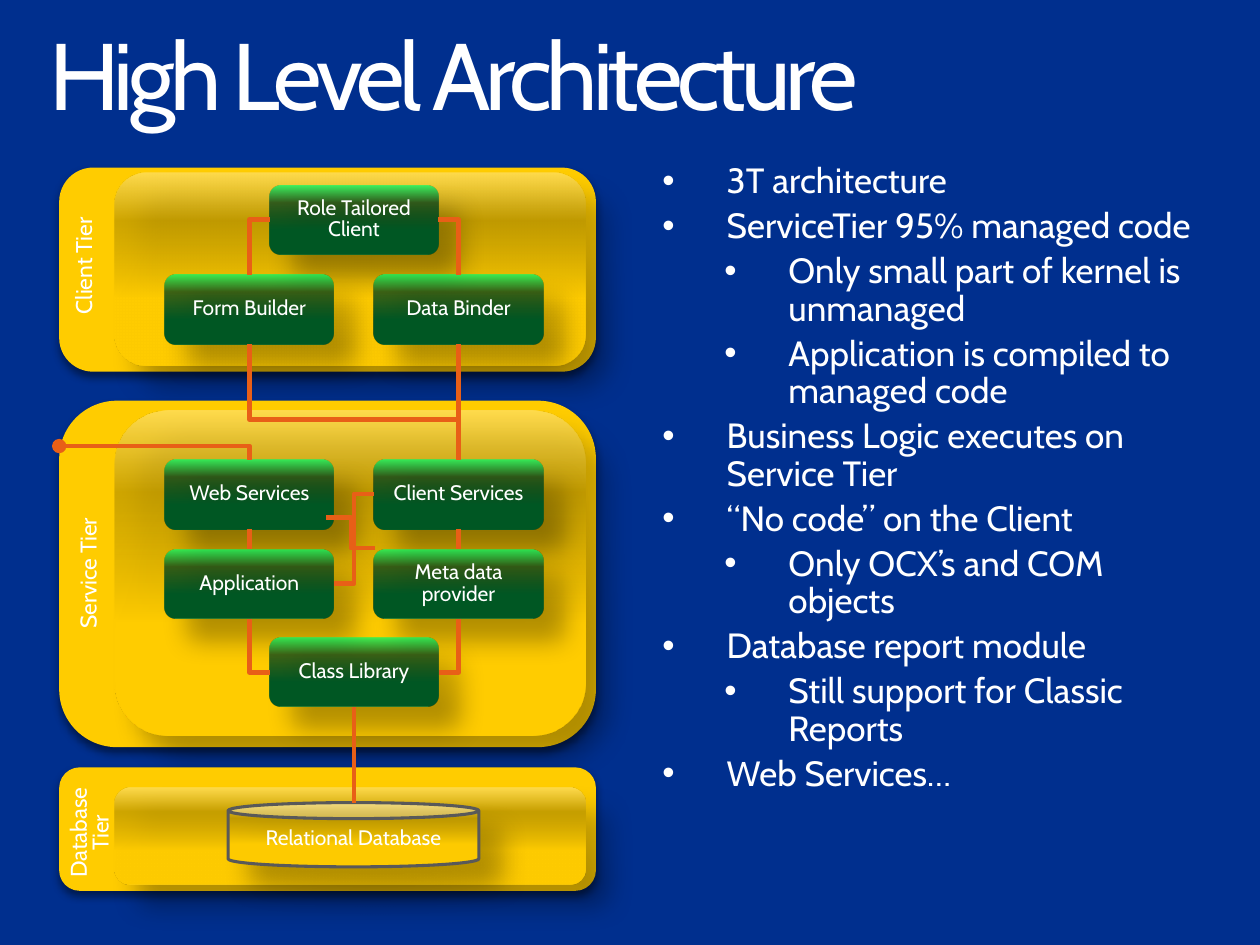
from dataclasses import dataclass

from lxml.etree import SubElement
from pptx import Presentation
from pptx.dml.color import RGBColor
from pptx.enum.shapes import MSO_CONNECTOR as Wire, MSO_SHAPE as Shape
from pptx.enum.text import MSO_ANCHOR as Anchor, MSO_AUTO_SIZE as AutoSize, PP_ALIGN as Align
from pptx.oxml.ns import qn
from pptx.util import Inches, Pt


@dataclass(frozen=True)
class Theme:
    font: str = "Cabin"
    bullet_font: str = "Arial"
    background: str = "002F8E"
    text: str = "FFFFFF"
    gold: str = "FFCC00"
    can_edge: str = "595959"
    wire: str = "E85F17"
    # Gradient stops: position, colour, opacity in percent
    gold_stops: tuple = ((0, "FFEB99", 100), (0, "FFCC00", 100), (35, "FFCC00", 100),
                         (75, "BF9900", 75), (100, "FFE066", 75))
    green_stops: tuple = ((0, "56FF9D", 100), (0, "005825", 100), (35, "005825", 100),
                          (75, "00421C", 75), (100, "02FF6C", 75))
    # Shadows: opacity in percent, blur and distance in points, direction in degrees
    tier_shadow: tuple = (45, 5, 3, 90)
    raised_shadow: tuple = (30, 15, 18, 45)
    title_size: int = 54
    body_size: int = 20
    label_size: int = 13
    box_size: int = 12
    can_edge_width: float = 1.75
    wire_width: float = 2.75


THEME = Theme()

# Diagram grid in inches
BOX_WIDTH, BOX_HEIGHT = 1.34, 0.55
COLUMNS = {"left": 1.31, "middle": 2.14, "right": 2.97}
ROWS = (1.47, 2.18, 3.65, 4.36, 5.06)
TIER_LEFT, TIER_WIDTH = 0.47, 4.26
PANEL_LEFT, PANEL_WIDTH = 0.91, 3.74

# Tier top and height, then panel top and height
TIERS = ((1.33, 1.62, 1.37, 1.53), (3.18, 2.75, 3.26, 2.58), (6.09, 0.98, 6.25, 0.77))
# Label, left edge, vertical centre, thickness, line spacing
LABELS = (("Client Tier", 0.55, 2.11, 0.31, 1.0),
          ("Service Tier", 0.62, 4.55, 0.28, 0.85),
          ("Database\vTier", 0.55, 6.61, 0.55, 0.8))
BOXES = (("Role Tailored Client", "middle", 0),
         ("Form Builder", "left", 1), ("Data Binder", "right", 1),
         ("Web Services", "left", 2), ("Client Services", "right", 2),
         ("Application", "left", 3), ("Meta data provider", "right", 3),
         ("Class Library", "middle", 4))
BULLETS = ((0, "3T architecture"),
           (0, "ServiceTier 95% managed code"),
           (1, "Only small part of kernel is unmanaged"),
           (1, "Application is compiled to managed code"),
           (0, "Business Logic executes on Service Tier"),
           (0, "“No code” on the Client"),
           (1, "Only OCX’s and COM objects"),
           (0, "Database report module"),
           (1, "Still support for Classic Reports"),
           (0, "Web Services…"))


def rgb(value):
    return RGBColor.from_string(value)


def set_values(target, values):
    for name, value in values.items():
        setattr(target, name, value)


def format_frame(frame, insets=(0, 0), anchor=Anchor.TOP):
    across, down = map(Inches, insets)
    set_values(frame, dict(margin_left=across, margin_right=across, margin_top=down,
                           margin_bottom=down, word_wrap=True, vertical_anchor=anchor))


def format_para(para, size, align=Align.LEFT, spacing=0.9):
    set_values(para, dict(alignment=align, line_spacing=spacing))
    set_values(para.font, dict(name=THEME.font, size=Pt(size)))
    para.font.color.rgb = rgb(THEME.text)


def add_color(parent, color, opacity):
    node = SubElement(parent, qn("a:srgbClr"), val=color)
    if opacity < 100:
        SubElement(node, qn("a:alpha"), val=str(opacity * 1000))


def add_shadow(shape, opacity, blur, distance, direction):
    shape.shadow.inherit = False
    effects = shape._element.spPr.find(qn("a:effectLst"))
    shadow = SubElement(effects, qn("a:outerShdw"), blurRad=str(Pt(blur)), dist=str(Pt(distance)),
                        dir=str(direction * 60000), algn="ctr", rotWithShape="0")
    add_color(shadow, "000000", opacity)


def fill_gradient(shape, stops):
    shape.fill.gradient()
    shape.fill.gradient_angle = 90
    stop_list = shape._element.spPr.find(".//" + qn("a:gsLst"))
    for old in list(stop_list):
        stop_list.remove(old)
    for position, color, opacity in stops:
        stop = SubElement(stop_list, qn("a:gs"), pos=str(position * 1000))
        add_color(stop, color, opacity)


def add_tier(page, top, height):
    tier = page.shapes.add_shape(Shape.ROUNDED_RECTANGLE,
                                 *map(Inches, (TIER_LEFT, top, TIER_WIDTH, height)))
    tier.fill.solid()
    tier.fill.fore_color.rgb = rgb(THEME.gold)
    tier.line.fill.background()
    add_shadow(tier, *THEME.tier_shadow)


def add_raised(page, place, stops, text="", kind=Shape.ROUNDED_RECTANGLE):
    shape = page.shapes.add_shape(kind, *map(Inches, place))
    fill_gradient(shape, stops)
    shape.line.fill.background()
    add_shadow(shape, *THEME.raised_shadow)
    if text:
        format_frame(shape.text_frame, (0.12, 0.06), Anchor.MIDDLE)
        shape.text_frame.text = text
        format_para(shape.text_frame.paragraphs[0], THEME.box_size, Align.CENTER, 0.85)
    return shape


def add_label(page, text, left, middle, thickness, spacing):
    length = 1.89
    place = (left + (thickness - length) / 2, middle - thickness / 2, length, thickness)
    label = page.shapes.add_textbox(*map(Inches, place))
    label.rotation = 270
    format_frame(label.text_frame)
    label.text_frame.text = text
    format_para(label.text_frame.paragraphs[0], THEME.label_size, Align.CENTER, spacing)


def format_wire(wire):
    wire.line.color.rgb = rgb(THEME.wire)
    wire.line.width = Pt(THEME.wire_width)
    SubElement(wire._element.spPr, qn("a:effectLst"))


def join_down(page, upper, lower=None, end=None):
    """Straight wire from the bottom of one box to the top of another, or to a point."""
    wire = page.shapes.add_connector(Wire.STRAIGHT, 0, 0, *map(Inches, end or (0, 0)))
    wire.begin_connect(upper, 2)
    if lower is not None:
        wire.end_connect(lower, 0)
    format_wire(wire)


def add_elbow(page, begin, end, vertical=True, bend=None, oval=False):
    """Bent wire; with a bend share it turns twice, otherwise once."""
    (x1, y1), (x2, y2) = begin, end
    if vertical:
        # Lay the path out sideways round its centre, then turn it a quarter
        mid_x, mid_y = (x1 + x2) / 2, (y1 + y2) / 2
        half_x, half_y = (y2 - y1) / 2, (x1 - x2) / 2
        x1, x2, y1, y2 = mid_x - half_x, mid_x + half_x, mid_y - half_y, mid_y + half_y
    wire = page.shapes.add_connector(Wire.ELBOW, *map(Inches, (x1, y1, x2, y2)))
    wire._element.spPr.xfrm.set("rot", "5400000" if vertical else "0")
    geometry = wire._element.spPr.find(qn("a:prstGeom"))
    if bend is None:
        geometry.set("prst", "bentConnector2")
    else:
        SubElement(geometry.find(qn("a:avLst")), qn("a:gd"), name="adj1",
                   fmla=f"val {round(bend * 100000)}")
    format_wire(wire)
    if oval:
        SubElement(wire.line._get_or_add_ln(), qn("a:tailEnd"), type="oval")


def add_title(page, text):
    title = page.shapes.title
    set_values(title, dict(left=Inches(0.39), top=Inches(0.23),
                           width=Inches(9.17), height=Inches(0.73)))
    format_frame(title.text_frame)
    title.text_frame.auto_size = AutoSize.SHAPE_TO_FIT_TEXT
    title.text_frame.text = text
    para = title.text_frame.paragraphs[0]
    format_para(para, THEME.title_size)
    para.runs[0].font._element.set("spc", "-300")


def add_bullets(page):
    box = page.shapes.add_textbox(*map(Inches, (5.16, 1.25, 4.43, 5.86)))
    frame = box.text_frame
    format_frame(frame, (0.1, 0.05))
    for number, (level, text) in enumerate(BULLETS):
        para = frame.add_paragraph() if number else frame.paragraphs[0]
        para.text, para.level = text, level
        properties = para._p.get_or_add_pPr()
        properties.set("marL", str(Inches((0.51, 1)[level])))
        properties.set("indent", str(Inches(-0.51)))
        SubElement(properties, qn("a:buFont"), typeface=THEME.bullet_font)
        SubElement(properties, qn("a:buChar"), char="•")
        format_para(para, THEME.body_size)
        if number:
            para.space_before = Pt(THEME.body_size * 0.2)


def main():
    deck = Presentation()
    deck.slide_width, deck.slide_height = Inches(10), Inches(7.5)
    page = deck.slides.add_slide(deck.slide_layouts[5])
    page.background.fill.solid()
    page.background.fill.fore_color.rgb = rgb(THEME.background)
    add_title(page, "High Level Architecture")

    # Tiers with their panels and labels
    for tier_top, tier_height, panel_top, panel_height in TIERS:
        add_tier(page, tier_top, tier_height)
        add_raised(page, (PANEL_LEFT, panel_top, PANEL_WIDTH, panel_height), THEME.gold_stops)
    for label in LABELS:
        add_label(page, *label)

    # Components and database
    boxes = {text: add_raised(page, (COLUMNS[column], ROWS[row], BOX_WIDTH, BOX_HEIGHT),
                              THEME.green_stops, text)
             for text, column, row in BOXES}
    database = add_raised(page, (1.81, 6.37, 1.99, 0.51), THEME.gold_stops,
                          "Relational Database", Shape.CAN)
    database.line.color.rgb = rgb(THEME.can_edge)
    database.line.width = Pt(THEME.can_edge_width)

    # Straight wires
    for upper, lower in (("Web Services", "Application"),
                         ("Client Services", "Meta data provider"),
                         ("Data Binder", "Client Services")):
        join_down(page, boxes[upper], boxes[lower])
    join_down(page, boxes["Class Library"], end=(2.81, 6.37))

    # Wires from both outer columns to the middle boxes
    left, middle, right = (COLUMNS[name] + BOX_WIDTH / 2 for name in COLUMNS)
    for center, side in ((left, -1), (right, 1)):
        edge = middle + side * BOX_WIDTH / 2
        add_elbow(page, (center, ROWS[1]), (edge, ROWS[0] + BOX_HEIGHT / 2))
        add_elbow(page, (center, ROWS[3] + BOX_HEIGHT), (edge, ROWS[4] + BOX_HEIGHT / 2))

    # Wires between columns and out of the service tier
    add_elbow(page, (right, ROWS[2]), (left, ROWS[1] + BOX_HEIGHT), bend=0.35)
    add_elbow(page, (2.65, 4.63), (2.97, 3.92), vertical=False, bend=0.5)
    add_elbow(page, (2.98, 4.35), (2.59, 4.11), vertical=False, bend=0.5)
    add_elbow(page, (left, ROWS[2]), (TIER_LEFT, 3.54), oval=True)

    add_bullets(page)
    deck.save("out.pptx")


if __name__ == "__main__":
    main()
